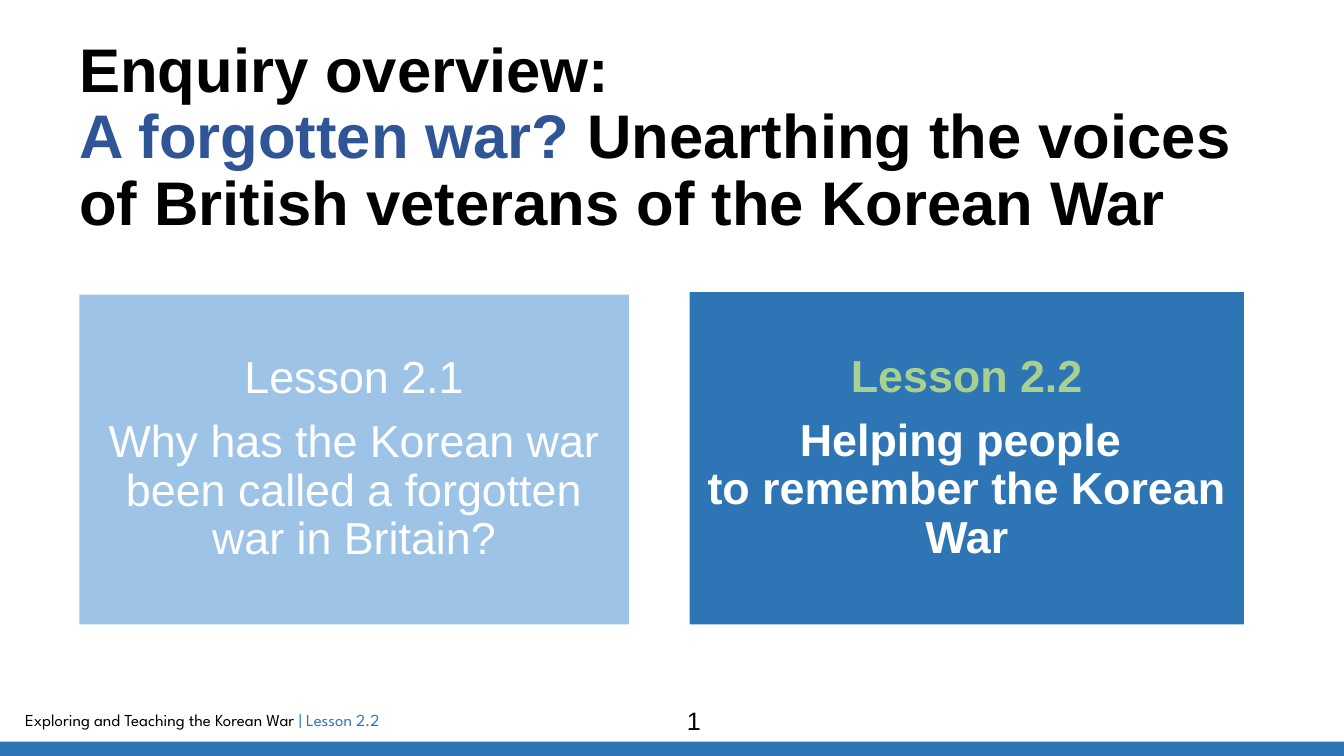
from pptx import Presentation
from pptx.dml.color import RGBColor
from pptx.enum import shapes, text
from pptx.util import Pt

HUES = {"black": "000000", "white": "FFFFFF", "navy": "2F5597",
        "blue": "2E75B6", "pale": "9DC3E6", "green": "A9D18E"}

deck = Presentation()
deck.slide_width, deck.slide_height = Pt(960), Pt(540)
slide = deck.slides.add_slide(deck.slide_layouts[6])


def block(place, fill=None, inset=(7.2, 3.6)):
    """Add a filled rectangle, or a plain text box when there is no fill."""
    spot = [Pt(n) for n in place]
    if fill:
        shape = slide.shapes.add_shape(shapes.MSO_SHAPE.RECTANGLE, *spot)
        shape.shadow.inherit = False
        shape.fill.solid()
        shape.fill.fore_color.rgb = RGBColor.from_string(HUES[fill])
        shape.line.fill.background()
    else:
        shape = slide.shapes.add_textbox(*spot)
    frame = shape.text_frame
    frame.word_wrap = True
    frame.margin_left = frame.margin_right = Pt(inset[0])
    frame.margin_top = frame.margin_bottom = Pt(inset[1])
    return frame


def write(para, words, size, hue, bold=False, face="Arial"):
    run = para.add_run()
    run.text = words
    font = run.font
    font.name, font.size, font.bold = face, Pt(size), bold
    font.color.rgb = RGBColor.from_string(HUES[hue])


# Footer
foot = block((10.8, 503.3, 563, 21.6))
foot.auto_size = text.MSO_AUTO_SIZE.SHAPE_TO_FIT_TEXT
for words, hue in (("Exploring and Teaching the Korean War ", "black"),
                   ("| Lesson 2.2", "blue")):
    write(foot.paragraphs[0], words, 12, hue, face="League Spartan")
block((0, 529.8, 960, 10.2), "blue")

# Title
title = block((56.7, 28, 828, 154), inset=(0, 0)).paragraphs[0]
title.line_spacing = 0.9
write(title, "Enquiry overview: ", 44, "black", True)
title.add_line_break()
write(title, "A forgotten war? ", 44, "navy", True)
write(title, "Unearthing the voices of British veterans of the Korean War",
      44, "black", True)

# Lesson cards
cards = [
    ((56.7, 210.5, 392.6, 235.5), "pale", False, "white", "Lesson 2.1",
     ["Why has the Korean war been called a forgotten war in Britain?"]),
    ((492.6, 208.6, 396, 237.4), "blue", True, "green", "Lesson 2.2",
     ["Helping people ", "to remember the Korean War"]),
]
for place, fill, bold, hue, head, lines in cards:
    card = block(place, fill, (10, 10))
    card.vertical_anchor = text.MSO_ANCHOR.MIDDLE
    name, topic = card.paragraphs[0], card.add_paragraph()
    for para in (name, topic):
        para.alignment = text.PP_ALIGN.CENTER
        para.line_spacing = 0.9
        para.space_after = Pt(11.2)
    write(name, head, 32, hue, bold)
    for i, line in enumerate(lines):
        if i:
            topic.add_line_break()
        write(topic, line, 32, "white", bold)

# Slide number
number = block((313.2, 500.4, 365, 28.8)).paragraphs[0]
number.alignment = text.PP_ALIGN.CENTER
write(number, "1", 18, "black")

deck.save("out.pptx")
